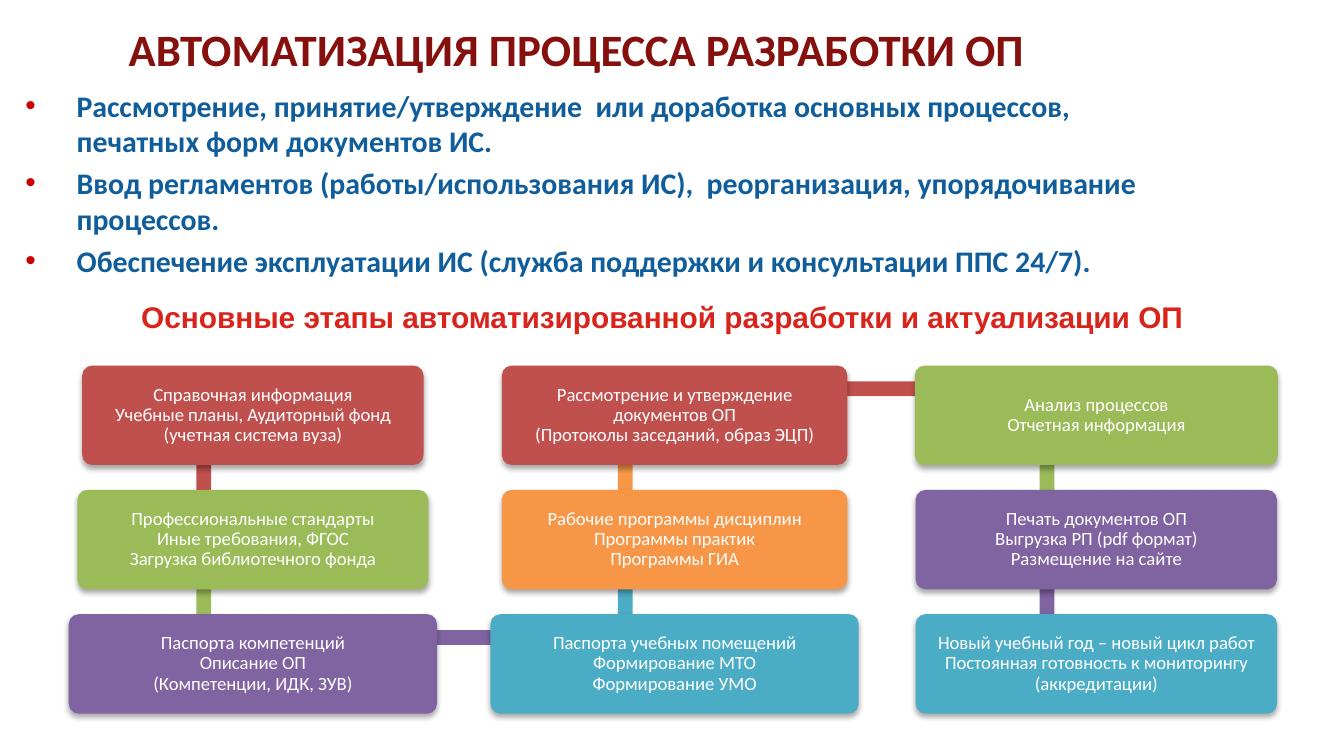
from copy import deepcopy

from lxml import etree
from pptx import Presentation
from pptx.dml.color import RGBColor
from pptx.enum.shapes import MSO_SHAPE
from pptx.enum.text import MSO_ANCHOR, PP_ALIGN
from pptx.oxml.ns import qn
from pptx.util import Cm, Pt

RECTANGLE, ROUNDED = MSO_SHAPE.RECTANGLE, MSO_SHAPE.ROUNDED_RECTANGLE
MIDDLE, TOP = MSO_ANCHOR.MIDDLE, MSO_ANCHOR.TOP
CENTER, LEFT = PP_ALIGN.CENTER, PP_ALIGN.LEFT

# Content
TITLE = "АВТОМАТИЗАЦИЯ ПРОЦЕССА РАЗРАБОТКИ ОП"
BULLETS = [
    "Рассмотрение, принятие/утверждение  или доработка основных процессов, печатных форм документов ИС.",
    "Ввод регламентов (работы/использования ИС),  реорганизация, упорядочивание процессов.",
    "Обеспечение эксплуатации ИС (служба поддержки и консультации ППС 24/7).",
]
SUBTITLE = "Основные этапы автоматизированной разработки и актуализации ОП"

RED, GREEN, PURPLE = "C0504D", "9BBB59", "8064A2"
TEAL, ORANGE = "4BACC6", "F79646"
# Stages in the order of work: column, row, width in cm, colour, text
STAGES = [
    (0, 0, 6.45, RED, "Справочная информация\nУчебные планы, Аудиторный фонд\n(учетная система вуза)"),
    (0, 1, 6.63, GREEN, "Профессиональные стандарты\nИные требования, ФГОС\nЗагрузка библиотечного фонда"),
    (0, 2, 6.96, PURPLE, "Паспорта компетенций\nОписание ОП\n(Компетенции, ИДК, ЗУВ)"),
    (1, 2, 6.96, TEAL, "Паспорта учебных помещений\nФормирование МТО\nФормирование УМО"),
    (1, 1, 6.53, ORANGE, "Рабочие программы дисциплин\nПрограммы практик\nПрограммы ГИА"),
    (1, 0, 6.53, RED, "Рассмотрение и утверждение документов ОП\n(Протоколы заседаний, образ ЭЦП)"),
    (2, 0, 6.86, GREEN, "Анализ процессов\nОтчетная информация"),
    (2, 1, 6.83, PURPLE, "Печать документов ОП\nВыгрузка РП (pdf формат)\nРазмещение на сайте"),
    (2, 2, 6.83, TEAL, "Новый учебный год – новый цикл работ\nПостоянная готовность к мониторингу (аккредитации)"),
]

# Stage grid, in cm
FIRST_CENTER, COLUMN_STEP = 4.78, 7.97
FIRST_TOP, ROW_STEP, CARD_HEIGHT = 6.91, 2.35, 1.88
LINK_LEFT_OF_CENTER, LINK_BELOW_TOP, LINK_WIDTH = 0.93, 0.44, 0.28


def color(hex_string):
    return RGBColor.from_string(hex_string)


def style_text(paragraph, size, font_name, hex_string, bold=False):
    for run in paragraph.runs:
        run.font.size = Pt(size)
        run.font.name = font_name
        run.font.bold = bold
        run.font.color.rgb = color(hex_string)
    # Line breaks take the size of the text around them
    for line_break in paragraph._p.findall(qn("a:br")):
        line_break.append(deepcopy(paragraph.runs[0]._r.rPr))


def set_frame(frame, anchor, horizontal, vertical):
    frame.word_wrap = True
    frame.vertical_anchor = anchor
    frame.margin_left = frame.margin_right = Cm(horizontal)
    frame.margin_top = frame.margin_bottom = Cm(vertical)


def add_text(slide, box, lines, size, font_name, hex_string,
             anchor=TOP, align=LEFT, margins=(0.18, 0.1)):
    frame = slide.shapes.add_textbox(*map(Cm, box)).text_frame
    set_frame(frame, anchor, *margins)
    frame.text = "\n".join(lines)
    for paragraph in frame.paragraphs:
        paragraph.alignment = align
        style_text(paragraph, size, font_name, hex_string, bold=True)
    return frame


def add_bullet(paragraph, indent, hex_string):
    properties = paragraph._p.get_or_add_pPr()
    properties.set("marL", str(Cm(indent)))
    properties.set("indent", str(-Cm(indent)))
    before = etree.SubElement(properties, qn("a:spcBef"))
    etree.SubElement(before, qn("a:spcPct"), val="20000")
    bullet_color = etree.SubElement(properties, qn("a:buClr"))
    etree.SubElement(bullet_color, qn("a:srgbClr"), val=hex_string)
    etree.SubElement(properties, qn("a:buFont"), typeface="Arial")
    etree.SubElement(properties, qn("a:buChar"), char="•")


def add_block(slide, kind, box, hex_string):
    shape = slide.shapes.add_shape(kind, *map(Cm, box))
    shape.shadow.inherit = False
    shape.fill.solid()
    shape.fill.fore_color.rgb = color(hex_string)
    shape.line.fill.background()
    return shape


def add_soft_shadow(shape):
    effects = shape._element.spPr.find(qn("a:effectLst"))
    shadow = etree.SubElement(effects, qn("a:outerShdw"), blurRad=str(Pt(3.1)),
                              dist=str(Pt(1.8)), dir="5400000", rotWithShape="0")
    shade = etree.SubElement(shadow, qn("a:srgbClr"), val="000000")
    etree.SubElement(shade, qn("a:alpha"), val="35000")


def link_point(column, row):
    return (FIRST_CENTER + column * COLUMN_STEP - LINK_LEFT_OF_CENTER,
            FIRST_TOP + row * ROW_STEP + LINK_BELOW_TOP)


def add_link(slide, stage, next_stage):
    (x1, y1), (x2, y2) = link_point(*stage[:2]), link_point(*next_stage[:2])
    box = (min(x1, x2) - LINK_WIDTH / 2, min(y1, y2) - LINK_WIDTH / 2,
           abs(x2 - x1) + LINK_WIDTH, abs(y2 - y1) + LINK_WIDTH)
    add_block(slide, RECTANGLE, box, stage[3])


def add_card(slide, column, row, width, hex_string, text):
    left = FIRST_CENTER + column * COLUMN_STEP - width / 2
    top = FIRST_TOP + row * ROW_STEP
    card = add_block(slide, ROUNDED, (left, top, width, CARD_HEIGHT), hex_string)
    card.adjustments[0] = 0.1
    add_soft_shadow(card)
    set_frame(card.text_frame, MIDDLE, 0.15, 0.15)
    paragraph = card.text_frame.paragraphs[0]
    paragraph.text = text
    paragraph.alignment = CENTER
    paragraph.line_spacing = 0.9
    style_text(paragraph, 10, "Calibri", "FFFFFF")


def main():
    presentation = Presentation()
    presentation.slide_width, presentation.slide_height = Cm(25.4), Cm(14.29)
    slide = presentation.slides.add_slide(presentation.slide_layouts[6])

    # Stages: links lie behind the cards
    for stage, next_stage in zip(STAGES, STAGES[1:]):
        add_link(slide, stage, next_stage)
    for stage in STAGES:
        add_card(slide, *stage)

    # Headings and bullet list
    add_text(slide, (1.09, 0.08, 19.61, 1.68), [TITLE], 24, "Calibri", "85100D",
             MIDDLE, CENTER, (0.25, 0.13))
    bullet_frame = add_text(slide, (0.3, 1.55, 22.2, 3.99), BULLETS, 16, "Calibri", "0F5D9B")
    for paragraph in bullet_frame.paragraphs:
        add_bullet(paragraph, 0.97, "CC0000")
    add_text(slide, (2.49, 5.54, 20.4, 1.12), [SUBTITLE], 16, "Arial", "D9241C")

    presentation.save("out.pptx")


if __name__ == "__main__":
    main()
